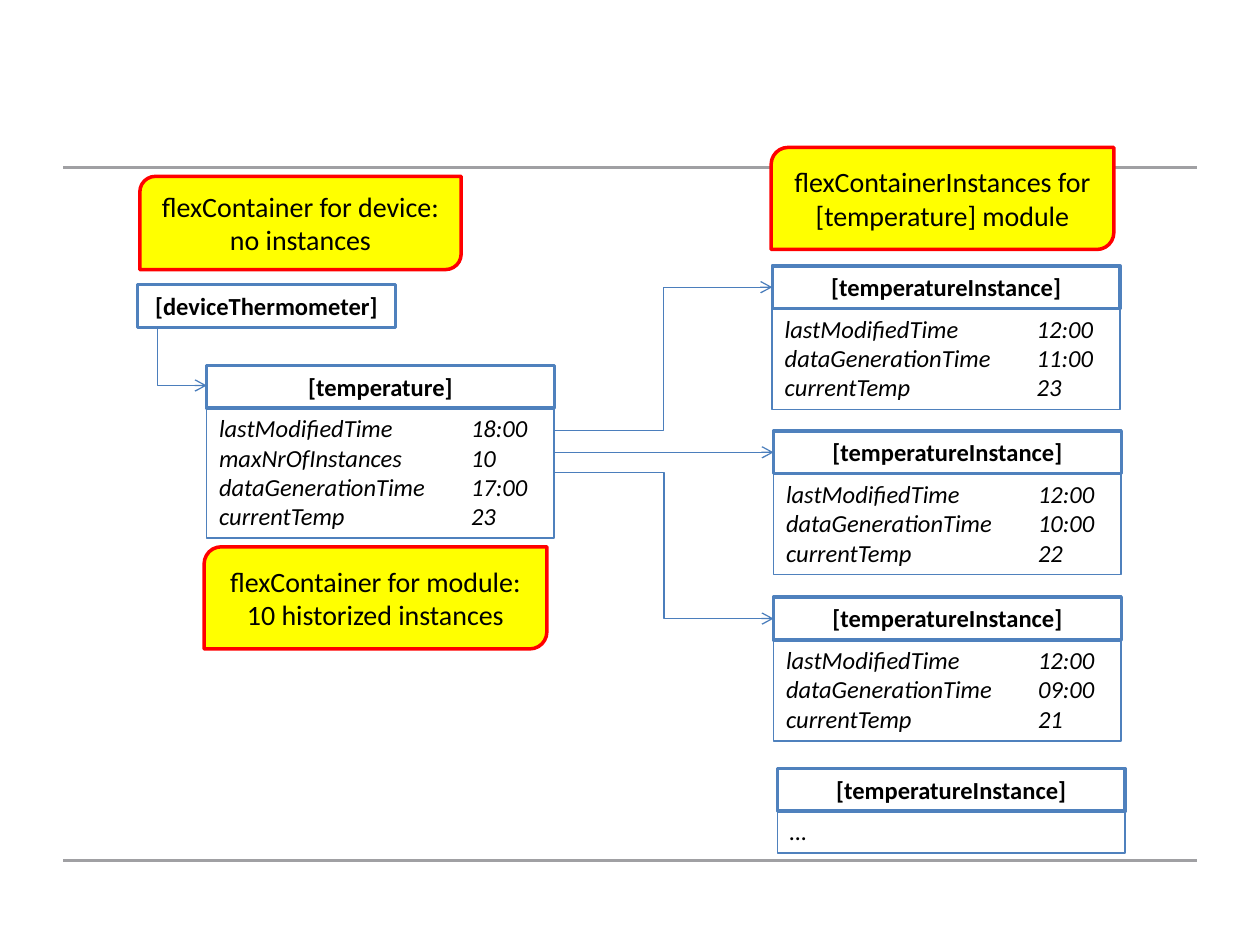
from lxml import etree
from pptx import Presentation
from pptx.dml.color import RGBColor
from pptx.enum.shapes import MSO_CONNECTOR, MSO_SHAPE
from pptx.enum.text import MSO_ANCHOR, MSO_AUTO_SIZE, PP_ALIGN
from pptx.oxml.ns import qn
from pptx.util import Inches, Pt

STRAIGHT, ELBOW = MSO_CONNECTOR.STRAIGHT, MSO_CONNECTOR.ELBOW
CALLOUT = MSO_SHAPE.ROUND_2_DIAG_RECTANGLE
MIDDLE, FIT_SHAPE = MSO_ANCHOR.MIDDLE, MSO_AUTO_SIZE.SHAPE_TO_FIT_TEXT
LEFT, CENTER = PP_ALIGN.LEFT, PP_ALIGN.CENTER

BLACK = RGBColor(0x00, 0x00, 0x00)
BLUE = RGBColor(0x4F, 0x81, 0xBD)
ARROW_BLUE = RGBColor(0x4B, 0x7E, 0xBC)
GRAY = RGBColor(0xA0, 0xA0, 0xA3)
YELLOW = RGBColor(0xFF, 0xFF, 0x00)
RED = RGBColor(0xFF, 0x00, 0x00)

FONT = "Calibri"
BOX_WIDTH = 2.76
HEADER_HEIGHT = 0.34
HEADER_STEP = 0.33
VALUE_TAB = 2


def format_paragraph(paragraph, text, size, alignment, bold=False, italic=False):
    paragraph.text = text
    paragraph.alignment = alignment
    font = paragraph.font
    font.name, font.size = FONT, Pt(size)
    font.bold, font.italic = bold, italic
    font.color.rgb = BLACK


def add_tab_stop(paragraph, position):
    tabs = etree.SubElement(paragraph._p.get_or_add_pPr(), qn("a:tabLst"))
    etree.SubElement(tabs, qn("a:tab"), pos=str(Inches(position)), algn="l")


def add_box(slide, left, top, width, height, line_width):
    box = slide.shapes.add_textbox(Inches(left), Inches(top), Inches(width), Inches(height))
    box.line.color.rgb = BLUE
    box.line.width = Pt(line_width)
    box.text_frame.word_wrap = True
    box.text_frame.auto_size = FIT_SHAPE
    return box.text_frame


def add_header(slide, text, left, top, width=BOX_WIDTH):
    frame = add_box(slide, left, top, width, HEADER_HEIGHT, 2)
    format_paragraph(frame.paragraphs[0], text, 14, CENTER, bold=True)


def add_resource(slide, name, left, top, height, rows):
    add_header(slide, name, left, top)
    frame = add_box(slide, left, top + HEADER_STEP, BOX_WIDTH, height, 1)
    for index, row in enumerate(rows):
        paragraph = frame.add_paragraph() if index else frame.paragraphs[0]
        add_tab_stop(paragraph, VALUE_TAB)
        format_paragraph(paragraph, "\t".join(row), 14, LEFT, italic=True)


def add_callout(slide, text, left, top, width, height):
    shape = slide.shapes.add_shape(
        CALLOUT, Inches(left), Inches(top), Inches(width), Inches(height))
    shape.shadow.inherit = False
    shape.fill.solid()
    shape.fill.fore_color.rgb = YELLOW
    shape.line.color.rgb = RED
    shape.line.width = Pt(2)
    shape.text_frame.word_wrap = True
    shape.text_frame.vertical_anchor = MIDDLE
    format_paragraph(shape.text_frame.paragraphs[0], text, 16, CENTER)


def add_line(slide, kind, begin, end, color, width):
    connector = slide.shapes.add_connector(kind, *map(Inches, begin + end))
    connector.line.color.rgb = color
    connector.line.width = Pt(width)
    etree.SubElement(connector._element.spPr, qn("a:effectLst"))
    return connector


def add_arrow(slide, begin, end):
    connector = add_line(slide, ELBOW, begin, end, ARROW_BLUE, 0.75)
    etree.SubElement(connector.line._get_or_add_ln(), qn("a:tailEnd"), type="arrow")
    return connector


def add_corner_arrow(slide, begin, end):
    center_x, center_y = (begin[0] + end[0]) / 2, (begin[1] + end[1]) / 2
    half_width, half_height = (end[1] - begin[1]) / 2, (end[0] - begin[0]) / 2
    connector = add_arrow(
        slide,
        (center_x + half_width, center_y - half_height),
        (center_x - half_width, center_y + half_height))
    properties = connector._element.spPr
    properties.find(qn("a:xfrm")).set("rot", str(270 * 60000))
    properties.find(qn("a:prstGeom")).set("prst", "bentConnector2")


def main():
    presentation = Presentation()
    presentation.slide_width, presentation.slide_height = Inches(10), Inches(7.5)
    slide = presentation.slides.add_slide(presentation.slide_layouts[6])

    for y in (1.33, 6.83):
        add_line(slide, STRAIGHT, (0.5, y), (9.5, y), GRAY, 1.75)

    add_header(slide, "[deviceThermometer]", 1.09, 2.26, 2.05)
    add_resource(slide, "[temperature]", 1.64, 2.9, 1.04, [
        ("lastModifiedTime", "18:00"),
        ("maxNrOfInstances", "10"),
        ("dataGenerationTime", "17:00"),
        ("currentTemp", "23"),
    ])
    add_corner_arrow(slide, (1.25, 2.6), (1.64, 3.06))

    instances = [
        (6.13, 2.11, "11:00", "23", 3.42),
        (6.14, 3.42, "10:00", "22", 3.59),
        (6.14, 4.74, "09:00", "21", 3.75),
    ]
    for left, top, generated, temperature, arrow_y in instances:
        add_resource(slide, "[temperatureInstance]", left, top, 0.81, [
            ("lastModifiedTime", "12:00"),
            ("dataGenerationTime", generated),
            ("currentTemp", temperature),
        ])
        add_arrow(slide, (4.4, arrow_y), (left, top + HEADER_HEIGHT / 2))
    add_resource(slide, "[temperatureInstance]", 6.17, 6.1, HEADER_HEIGHT, [("…",)])

    add_callout(slide, "flexContainer for device: no instances", 1.11, 1.4, 2.55, 0.74)
    add_callout(slide, "flexContainer for module: 10 historized instances",
                1.62, 4.34, 2.72, 0.81)
    add_callout(slide, "flexContainerInstances for [temperature] module",
                6.12, 1.17, 2.72, 0.81)

    presentation.save("out.pptx")


if __name__ == "__main__":
    main()
